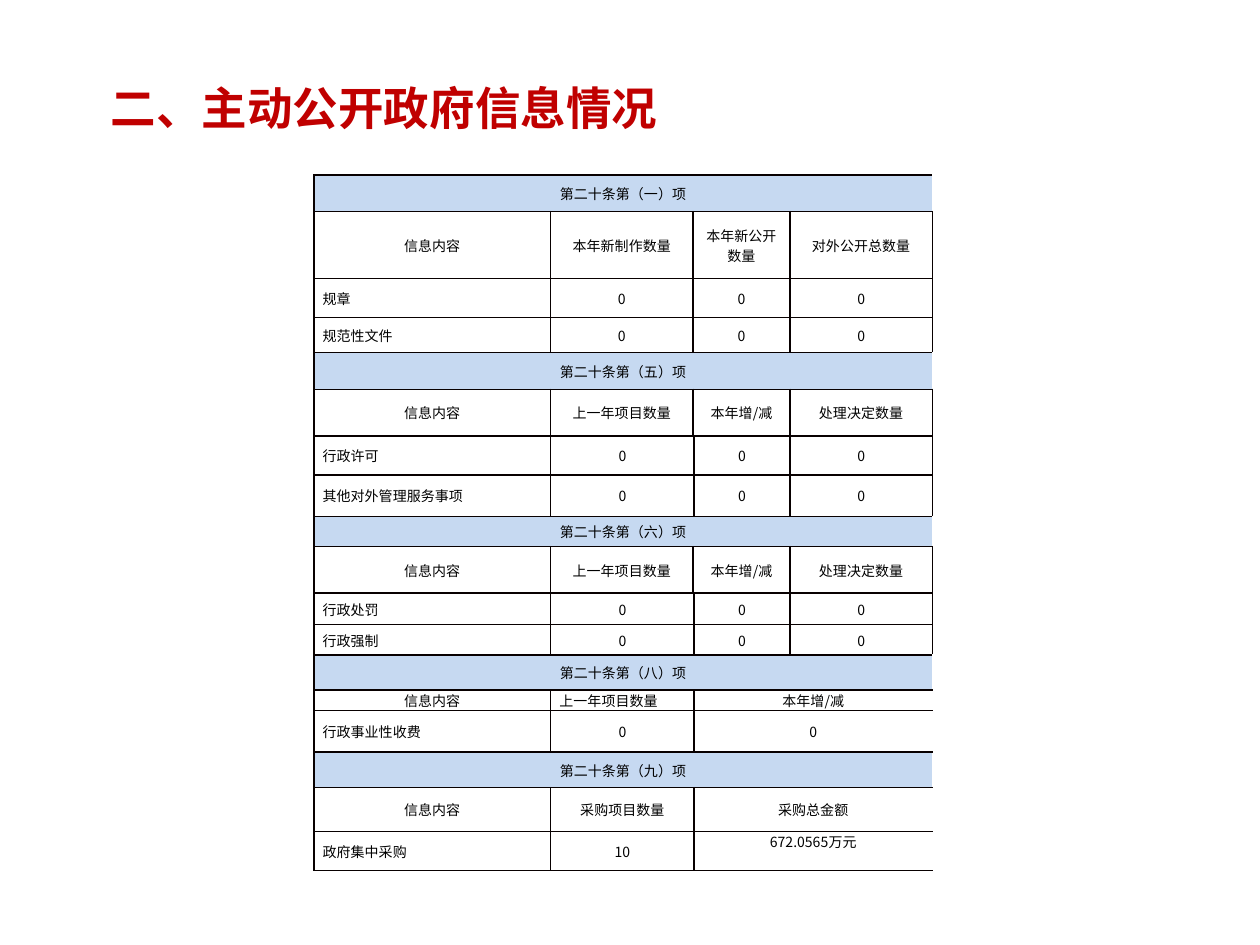
from dataclasses import dataclass

from lxml.etree import SubElement
from pptx import Presentation
from pptx.dml.color import RGBColor
from pptx.enum.text import MSO_ANCHOR, PP_ALIGN
from pptx.oxml.ns import qn
from pptx.util import Inches, Pt


@dataclass(frozen=True)
class Theme:
    font: str = "Noto Sans CJK SC"
    title_color: str = "C00000"
    text_color: str = "000000"
    band_color: str = "C6D9F1"
    border_color: str = "080000"
    title_size: int = 26
    cell_size: int = 8
    border_width: int = 1


THEME = Theme()
SLIDE_SIZE = (10, 7.5)
TITLE = "二、主动公开政府信息情况"
TITLE_BOX = (0.78, 0.56, 6.06, 0.64)
TABLE_ORIGIN = (2.49, 1.39)
COLUMN_WIDTHS = (1.88, 1.13, 0.01, 0.76, 1.13)

# Columns where the cells of a row start; each cell runs to the next start.
BAND = (0,)
HAIRLINE_RIGHT = (0, 1, 2, 4)
HAIRLINE_LEFT = (0, 1, 3, 4)
THREE_CELLS = (0, 1, 3)

CHANGE_HEADER = ("信息内容", "上一年项目数量", "本年增/减", "处理决定数量")
ZEROS = ("0", "0", "0")

# Each row: height, cell starts, texts. The first two rows of a section are headings.
SECTIONS = [
    [
        (0.29, BAND, ("第二十条第（一）项",)),
        (0.53, HAIRLINE_RIGHT, ("信息内容", "本年新制作数量", "本年新公开数量", "对外公开总数量")),
        (0.31, HAIRLINE_RIGHT, ("规章", *ZEROS)),
        (0.28, HAIRLINE_RIGHT, ("规范性文件", *ZEROS)),
    ],
    [
        (0.29, BAND, ("第二十条第（五）项",)),
        (0.37, HAIRLINE_RIGHT, CHANGE_HEADER),
        (0.31, HAIRLINE_LEFT, ("行政许可", *ZEROS)),
        (0.33, HAIRLINE_LEFT, ("其他对外管理服务事项", *ZEROS)),
    ],
    [
        (0.24, BAND, ("第二十条第（六）项",)),
        (0.37, HAIRLINE_RIGHT, CHANGE_HEADER),
        (0.25, HAIRLINE_LEFT, ("行政处罚", *ZEROS)),
        (0.24, HAIRLINE_LEFT, ("行政强制", *ZEROS)),
    ],
    [
        (0.28, BAND, ("第二十条第（八）项",)),
        (0.16, THREE_CELLS, CHANGE_HEADER[:3]),
        (0.33, THREE_CELLS, ("行政事业性收费", "0", "0")),
    ],
    [
        (0.28, BAND, ("第二十条第（九）项",)),
        (0.35, THREE_CELLS, ("信息内容", "采购项目数量", "采购总金额")),
        (0.31, THREE_CELLS, ("政府集中采购", "10", "672.0565万元")),
    ],
]
# Cells that differ from the rule, as (row, column).
LEFT_ALIGNED_HEADER = (13, 1)
TOP_ANCHORED = (17, 3)


def write(paragraph, text, size, color, bold=False):
    run = paragraph.add_run()
    run.text = text
    formats = {"name": THEME.font, "size": Pt(size), "bold": bold}
    for attribute, value in formats.items():
        setattr(run.font, attribute, value)
    run.font.color.rgb = RGBColor.from_string(color)
    SubElement(run._r.get_or_add_rPr(), qn("a:ea"), typeface=THEME.font)


def add_borders(cell, sides):
    properties = cell._tc.get_or_add_tcPr()
    for side in sides:
        line = SubElement(properties, qn(f"a:ln{side}"), w=str(Pt(THEME.border_width)))
        fill = SubElement(line, qn("a:solidFill"))
        SubElement(fill, qn("a:srgbClr"), val=THEME.border_color)


def add_title(slide):
    title = slide.shapes.title
    for attribute, value in zip(("left", "top", "width", "height"), TITLE_BOX):
        setattr(title, attribute, Inches(value))
    title.text_frame.vertical_anchor = MSO_ANCHOR.MIDDLE
    paragraph = title.text_frame.paragraphs[0]
    paragraph.alignment = PP_ALIGN.LEFT
    paragraph.line_spacing = 0.9
    write(paragraph, TITLE, THEME.title_size, THEME.title_color, bold=True)


def fill_row(table, row, starts, texts, is_heading):
    ends = (*starts[1:], len(COLUMN_WIDTHS))
    for start, end, text in zip(starts, ends, texts):
        for column in range(start, end):
            cell = table.cell(row, column)
            sides = "L" * (column == start) + "R" * (column == end - 1) + "TB"
            add_borders(cell, sides)
            if starts == BAND:
                cell.fill.solid()
                cell.fill.fore_color.rgb = RGBColor.from_string(THEME.band_color)
            else:
                cell.fill.background()
        cell = table.cell(row, start)
        if end - start > 1:
            cell.merge(table.cell(row, end - 1))
        is_top = (row, start) == TOP_ANCHORED
        formats = {
            "margin_left": Inches(0.07),
            "margin_right": Inches(0.07),
            "margin_top": 0,
            "margin_bottom": 0,
            "vertical_anchor": MSO_ANCHOR.TOP if is_top else MSO_ANCHOR.MIDDLE,
        }
        for attribute, value in formats.items():
            setattr(cell, attribute, value)
        paragraph = cell.text_frame.paragraphs[0]
        is_left = (start == 0 and not is_heading) or (row, start) == LEFT_ALIGNED_HEADER
        paragraph.alignment = PP_ALIGN.LEFT if is_left else PP_ALIGN.CENTER
        write(paragraph, text, THEME.cell_size, THEME.text_color)


def add_disclosure_table(slide):
    rows = [(*row, place < 2) for section in SECTIONS for place, row in enumerate(section)]
    size = (sum(COLUMN_WIDTHS), sum(row[0] for row in rows))
    frame = slide.shapes.add_table(
        len(rows), len(COLUMN_WIDTHS), *map(Inches, TABLE_ORIGIN + size)
    )
    table = frame.table
    table.first_row = table.horz_banding = False
    for column, width in zip(table.columns, COLUMN_WIDTHS):
        column.width = Inches(width)
    for index, (height, starts, texts, is_heading) in enumerate(rows):
        table.rows[index].height = Inches(height)
        # Unused cells get the small size too, so that they do not stretch the row.
        for cell in table.rows[index].cells:
            cell.text_frame.paragraphs[0].font.size = Pt(THEME.cell_size)
            cell.margin_top = cell.margin_bottom = 0
        fill_row(table, index, starts, texts, is_heading)


def main():
    presentation = Presentation()
    presentation.slide_width, presentation.slide_height = map(Inches, SLIDE_SIZE)
    slide = presentation.slides.add_slide(presentation.slide_layouts[5])
    add_title(slide)
    add_disclosure_table(slide)
    presentation.save("out.pptx")


if __name__ == "__main__":
    main()
